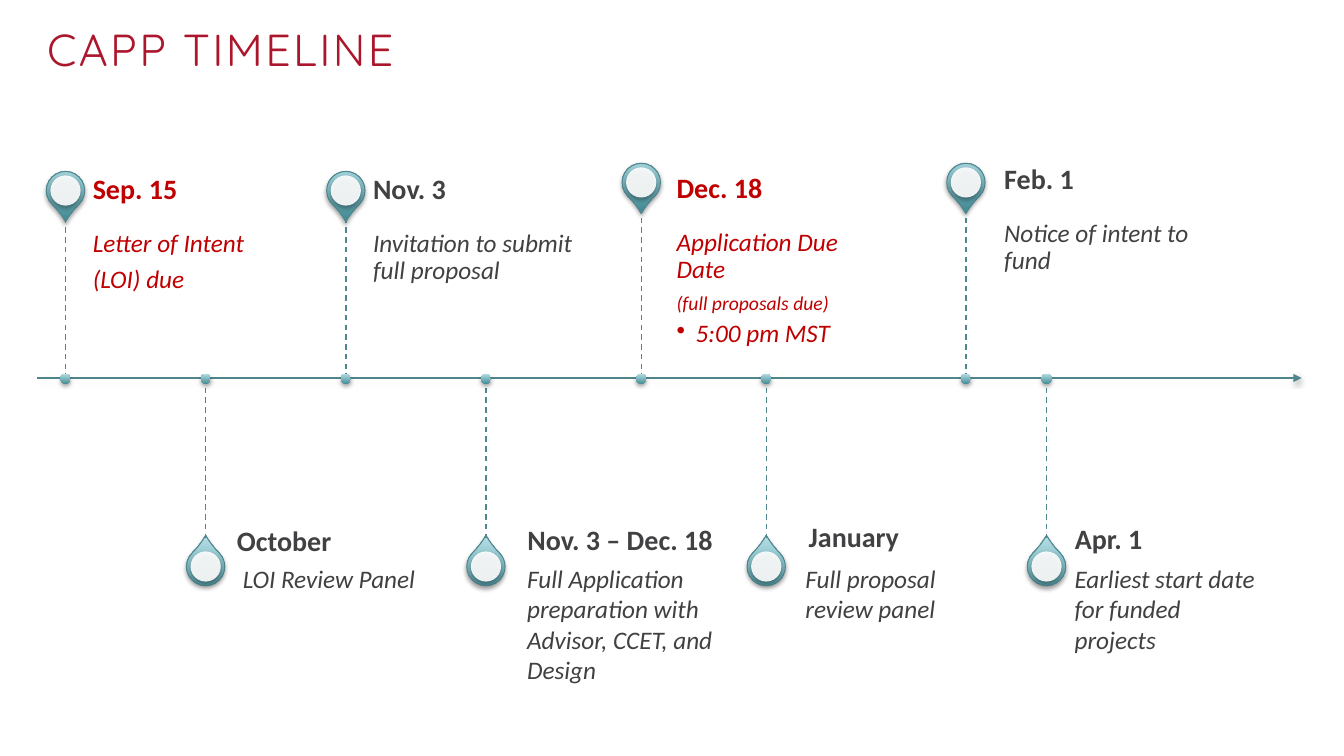
from dataclasses import dataclass

import lxml.etree
import pptx
import pptx.dml.color
import pptx.enum.dml
import pptx.enum.shapes
import pptx.enum.text
import pptx.oxml
import pptx.oxml.ns
import pptx.util

Inches = pptx.util.Inches
Pt = pptx.util.Pt
qn = pptx.oxml.ns.qn
SHAPES = pptx.enum.shapes.MSO_SHAPE
ANCHOR = pptx.enum.text.MSO_ANCHOR


@dataclass(frozen=True)
class Theme:
    title: str = "AC162C"
    text: str = "414042"
    deadline: str = "C00000"
    teal: str = "4F868E"
    gradient: tuple = ("468D97", "B0DBE3")
    cap: str = "FFFFFF"
    title_font: str = "Quicksand"
    body_font: str = "Calibri"
    title_size: int = 32
    date_size: int = 20
    detail_size: int = 18
    note_size: int = 14


@dataclass
class Milestone:
    """One date: axis position, date box corner, details and their box."""
    x: float
    date: str
    date_at: tuple
    details: list
    pin_y: float = 1.89
    detail_box: tuple = None
    deadline: bool = False


def rgb(value):
    return pptx.dml.color.RGBColor.from_string(value)


class Timeline:
    AXIS_Y = 3.75
    STEM = 1.59
    PIN, CAP, DOT = 0.38, 0.3, 0.1
    DATE_WIDTH, DATE_HEIGHT = 2.25, 0.56

    def __init__(self, slide, theme):
        self.slide = slide
        self.theme = theme

    def text(self, box, lines, *, size, color, font=None, bold=False, italic=False,
             insets=(0.1, 0.05, 0.1, 0.05), anchor=ANCHOR.TOP, line_spacing=0.9,
             gap=0.0, tracking=None, grow=False):
        """Lines are strings or (text, size, bulleted); gap is a share of the type size."""
        shape = self.slide.shapes.add_textbox(*map(Inches, box))
        frame = shape.text_frame
        frame.word_wrap = True
        frame.vertical_anchor = anchor
        frame.auto_size = (pptx.enum.text.MSO_AUTO_SIZE.SHAPE_TO_FIT_TEXT if grow
                           else pptx.enum.text.MSO_AUTO_SIZE.NONE)
        (frame.margin_left, frame.margin_top,
         frame.margin_right, frame.margin_bottom) = map(Inches, insets)
        for index, line in enumerate(lines):
            words, line_size, bulleted = (line, size, False) if isinstance(line, str) else line
            paragraph = frame.paragraphs[0] if index == 0 else frame.add_paragraph()
            if bulleted:
                paragraph.level = 1
                properties = paragraph._p.get_or_add_pPr()
                properties.set("marL", str(Inches(0.19)))
                properties.set("indent", str(-Inches(0.19)))
                lxml.etree.SubElement(properties, qn("a:buChar")).set("char", "•")
            paragraph.line_spacing = line_spacing
            paragraph.space_after = Pt(gap * line_size)
            run = paragraph.add_run()
            run.text = words
            run.font.name = font or self.theme.body_font
            run.font.size = Pt(line_size)
            run.font.bold = bold
            run.font.italic = italic
            run.font.color.rgb = rgb(color)
            if tracking:
                run.font._element.set("spc", str(round(tracking * 100)))

    def effects(self, shape, shadow=True):
        """Replaces the inherited shadow; call after fill and line are set."""
        effect_list = lxml.etree.SubElement(shape._element.spPr, qn("a:effectLst"))
        if shadow:
            outer = lxml.etree.SubElement(
                effect_list, qn("a:outerShdw"), blurRad=str(Pt(3.1)), dist=str(Pt(1.8)),
                dir="5400000", rotWithShape="0")
            black = lxml.etree.SubElement(outer, qn("a:srgbClr"), val="000000")
            lxml.etree.SubElement(black, qn("a:alpha"), val="35000")

    def line(self, start, end, width, dashed=False, arrow=False):
        line = self.slide.shapes.add_connector(
            pptx.enum.shapes.MSO_CONNECTOR.STRAIGHT, *map(Inches, start + end))
        line.line.color.rgb = rgb(self.theme.teal)
        line.line.width = Pt(width)
        if dashed:
            line.line.dash_style = pptx.enum.dml.MSO_LINE.DASH
        if arrow:
            lxml.etree.SubElement(line.line._get_or_add_ln(), qn("a:tailEnd"), type="triangle")
        self.effects(line, shadow=arrow)

    def disc(self, kind, x, y, size, *, color=None, outlined=False, rotation=0):
        """Centred on x, y; takes the teal gradient unless a colour is given."""
        disc = self.slide.shapes.add_shape(
            kind, *map(Inches, (x - size / 2, y - size / 2, size, size)))
        disc.rotation = rotation
        if kind == SHAPES.TEAR:
            disc.adjustments[0] = 1.15
        if color:
            disc.fill.solid()
            disc.fill.fore_color.rgb = rgb(color)
            solid = disc._element.spPr.find(qn("a:solidFill"))
            lxml.etree.SubElement(solid[0], qn("a:alpha"), val="90000")
        else:
            disc.fill.gradient()
            disc.fill.gradient_angle = 90
            for stop, shade in zip(disc.fill.gradient_stops, self.theme.gradient):
                stop.color.rgb = rgb(shade)
            disc._element.spPr.find(qn("a:gradFill")).set("rotWithShape", "0")
        if outlined:
            disc.line.color.rgb = rgb(self.theme.teal)
            disc.line.width = Pt(0.75)
        else:
            disc.line.fill.background()
        self.effects(disc)

    def milestone(self, item):
        above = item.pin_y < self.AXIS_Y
        color = self.theme.deadline if item.deadline else self.theme.text
        self.disc(SHAPES.TEAR, item.x, item.pin_y, self.PIN,
                  outlined=True, rotation=135 if above else 315)
        self.disc(SHAPES.OVAL, item.x, item.pin_y, self.CAP, color=self.theme.cap)
        left, top = item.date_at
        detail_style = dict(size=self.theme.detail_size, color=color, italic=True)
        if above:
            box = (left, top + self.DATE_HEIGHT, self.DATE_WIDTH, self.STEM)
            self.text(box, item.details, insets=(0, 0.12, 0.12, 0.19), gap=0.35, **detail_style)
        else:
            self.text(item.detail_box, item.details, line_spacing=1.0, grow=True, **detail_style)
        self.text((left, top, self.DATE_WIDTH, self.DATE_HEIGHT), [item.date],
                  size=self.theme.date_size, color=color, bold=True,
                  insets=(0, 0, 0.14, 0), anchor=ANCHOR.MIDDLE)
        stem_end = self.AXIS_Y + (-self.STEM if above else self.STEM)
        self.line((item.x, min(stem_end, self.AXIS_Y)), (item.x, max(stem_end, self.AXIS_Y)),
                  1, dashed=True)
        self.disc(SHAPES.OVAL, item.x, self.AXIS_Y + 0.01, self.DOT)


def main():
    theme = Theme()
    deck = pptx.Presentation()
    deck.slide_width, deck.slide_height = Inches(13.33), Inches(7.5)
    timeline = Timeline(deck.slides.add_slide(deck.slide_layouts[6]), theme)

    slots = [0.65 + 1.39 * index for index in range(8)]
    low_pin, high_pin, low_detail = 5.62, 1.81, 5.54
    milestones = [
        Milestone(slots[0], "Sep. 15", (0.92, 1.61), ["Letter of Intent", "(LOI) due"],
                  deadline=True),
        Milestone(slots[1], "October", (2.35, 5.1), ["LOI Review Panel"],
                  low_pin, (2.31, low_detail, 2.04, 0.4)),
        Milestone(slots[2], "Nov. 3", (3.7, 1.61), ["Invitation to submit full proposal"]),
        Milestone(slots[3], "Nov. 3 – Dec. 18", (5.23, 5.09),
                  ["Full Application preparation with Advisor, CCET, and Design"],
                  low_pin, (5.13, low_detail, 2.3, 1.31)),
        Milestone(6.36, "Dec. 18", (6.71, 1.6),
                  ["Application Due Date",
                   ("(full proposals due)", theme.note_size, False),
                   ("5:00 pm MST", theme.detail_size, True)],
                  high_pin, deadline=True),
        Milestone(slots[5], "January", (8.02, 5.06), ["Full proposal review panel"],
                  low_pin, (7.89, low_detail, 1.74, 0.71)),
        Milestone(9.58, "Feb. 1", (9.96, 1.51), ["Notice of intent to fund"], high_pin),
        Milestone(slots[7], "Apr. 1", (10.66, 5.08), ["Earliest start date for funded projects"],
                  low_pin, (10.56, low_detail, 2, 1.01)),
    ]

    timeline.text((0.37, 0.22, 12.53, 0.6), ["CAPP TIMELINE"], size=theme.title_size,
                  color=theme.title, font=theme.title_font, anchor=ANCHOR.MIDDLE, tracking=1.7)
    timeline.line((0.37, timeline.AXIS_Y), (12.91, timeline.AXIS_Y), 1.5, arrow=True)
    for item in milestones:
        timeline.milestone(item)
    deck.save("out.pptx")


if __name__ == "__main__":
    main()
